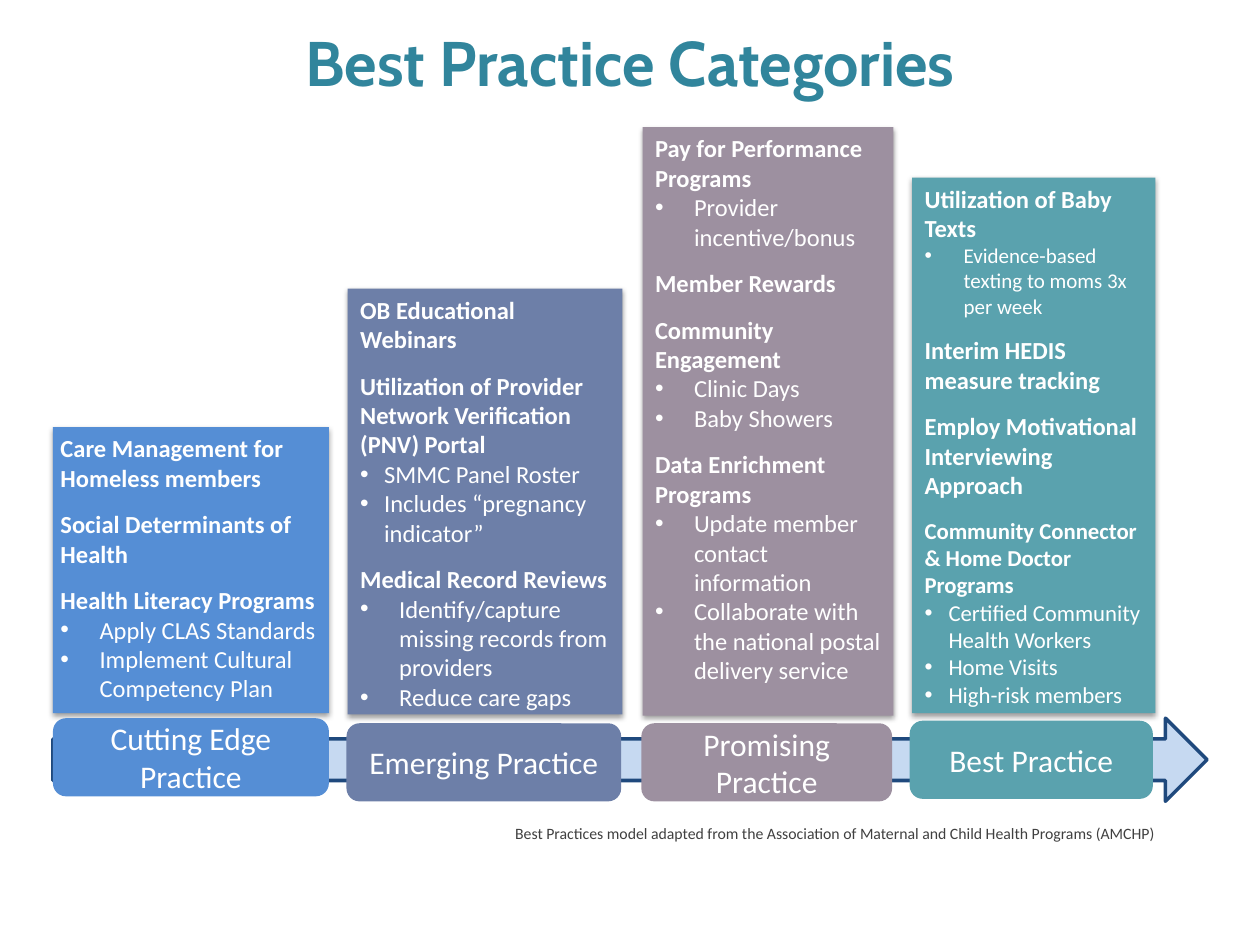
from dataclasses import dataclass

from lxml import etree
from pptx import Presentation
from pptx.dml.color import RGBColor
from pptx.enum.shapes import MSO_SHAPE
from pptx.enum.text import MSO_ANCHOR, PP_ALIGN
from pptx.oxml.ns import qn
from pptx.util import Inches, Pt

RECTANGLE = MSO_SHAPE.RECTANGLE
ROUNDED = MSO_SHAPE.ROUNDED_RECTANGLE
ARROW = MSO_SHAPE.RIGHT_ARROW
CENTER, LEFT = PP_ALIGN.CENTER, PP_ALIGN.LEFT
MIDDLE, TOP = MSO_ANCHOR.MIDDLE, MSO_ANCHOR.TOP

COLORS = {
    "title": "31859C", "white": "FFFFFF", "note": "404040",
    "arrow": "C6D9F1", "arrow_line": "1F497D", "shadow": "000000",
    "cutting_edge": "558ED5", "emerging": "6D7FA8",
    "promising": "9D90A0", "best": "5AA2AE",
}
WIDE, NARROW = 0.31, 0.19  # hanging indents of bullets, in inches
TOPIC_GAP = 9.75
LABEL_HEIGHT = 0.62


@dataclass
class Topic:
    heading: str
    bullets: tuple = ()
    indent: float = WIDE
    size: int = 14
    bullet_size: int = 14


@dataclass
class Category:
    name: str
    color: str
    bar: tuple
    label_left: float
    label_top: float
    topics: list
    side_insets: tuple = (0.1, 0.1)


CATEGORIES = [
    Category("Cutting Edge Practice", "cutting_edge", (0.42, 3.39, 2.19, 2.27), 0.42, 5.7, [
        Topic("Care Management for Homeless members"),
        Topic("Social Determinants of Health"),
        Topic("Health Literacy Programs",
              ("Apply CLAS Standards", "Implement Cultural Competency Plan")),
    ], side_insets=(0.06, 0)),
    Category("Emerging Practice", "emerging", (2.76, 2.29, 2.18, 3.38), 2.75, 5.74, [
        Topic("OB Educational Webinars"),
        Topic("Utilization of Provider Network Verification (PNV) Portal",
              ("SMMC Panel Roster", "Includes “pregnancy indicator”"), NARROW),
        Topic("Medical Record Reviews",
              ("Identify/capture missing records from providers", "Reduce care gaps")),
    ]),
    Category("Promising Practice", "promising", (5.1, 1.01, 1.99, 4.67), 5.09, 5.74, [
        Topic("Pay for Performance Programs", ("Provider incentive/bonus",)),
        Topic("Member Rewards"),
        Topic("Community Engagement", ("Clinic Days", "Baby Showers")),
        Topic("Data Enrichment Programs",
              ("Update member contact information",
               "Collaborate with the national postal delivery service")),
    ]),
    Category("Best Practice", "best", (7.24, 1.41, 1.93, 4.25), 7.22, 5.72, [
        Topic("Utilization of Baby Texts",
              ("Evidence-based texting to moms 3x per week",), bullet_size=12),
        Topic("Interim HEDIS measure tracking"),
        Topic("Employ Motivational Interviewing Approach"),
        Topic("Community Connector & Home Doctor Programs",
              ("Certified Community Health Workers", "Home Visits", "High-risk members"),
              NARROW, 13, 13),
    ]),
]


def rgb(name):
    return RGBColor.from_string(COLORS[name])


def add_run(paragraph, text, size, color, bold=False, font="Calibri"):
    run = paragraph.add_run()
    run.text = text
    run.font.name, run.font.size, run.font.bold = font, Pt(size), bold
    run.font.color.rgb = rgb(color)


def add_block(slide, kind, box, color):
    shape = slide.shapes.add_shape(kind, *map(Inches, box))
    shape.fill.solid()
    shape.fill.fore_color.rgb = rgb(color)
    shape.line.fill.background()
    shape.shadow.inherit = False
    return shape


def add_drop_shadow(shape):
    effects = shape._element.spPr.find(qn("a:effectLst"))
    shadow = etree.SubElement(effects, qn("a:outerShdw"), blurRad=str(Pt(3.1)),
                              dist=str(Pt(1.6)), dir="5400000", rotWithShape="0")
    color = etree.SubElement(shadow, qn("a:srgbClr"), val=COLORS["shadow"])
    etree.SubElement(color, qn("a:alpha"), val="38000")


def set_bullet(paragraph, indent):
    properties = paragraph._p.get_or_add_pPr()
    properties.set("marL", str(Inches(indent)))
    properties.set("indent", str(-Inches(indent)))
    etree.SubElement(properties, qn("a:buFont"), typeface="Arial")
    etree.SubElement(properties, qn("a:buChar"), char="•")


def add_topics(frame, topics):
    for number, topic in enumerate(topics):
        heading = frame.add_paragraph() if number else frame.paragraphs[0]
        heading.alignment = LEFT
        if number:
            heading.space_before = Pt(TOPIC_GAP)
        add_run(heading, topic.heading, topic.size, "white", bold=True)
        for text in topic.bullets:
            paragraph = frame.add_paragraph()
            paragraph.alignment = LEFT
            set_bullet(paragraph, topic.indent)
            add_run(paragraph, text, topic.bullet_size, "white")


def add_category(slide, category):
    """Place a bar of topics and the name label below it."""
    bar = add_block(slide, RECTANGLE, category.bar, category.color)
    add_drop_shadow(bar)
    frame = bar.text_frame
    frame.word_wrap = True
    frame.vertical_anchor = TOP
    frame.margin_left, frame.margin_right = map(Inches, category.side_insets)
    add_topics(frame, category.topics)

    label_box = (category.label_left, category.label_top, category.bar[2], LABEL_HEIGHT)
    label = add_block(slide, ROUNDED, label_box, category.color)
    label.text_frame.word_wrap = True
    label.text_frame.vertical_anchor = MIDDLE
    paragraph = label.text_frame.paragraphs[0]
    paragraph.alignment = CENTER
    add_run(paragraph, category.name, 18, "white")


def add_arrow(slide, box):
    arrow = add_block(slide, ARROW, box, "arrow")
    arrow.line.color.rgb = rgb("arrow_line")
    arrow.line.width = Pt(2)


def add_text(slide, box, text, size, color, alignment=LEFT, anchor=TOP, **style):
    frame = slide.shapes.add_textbox(*map(Inches, box)).text_frame
    frame.word_wrap = True
    frame.vertical_anchor = anchor
    paragraph = frame.paragraphs[0]
    paragraph.alignment = alignment
    add_run(paragraph, text, size, color, **style)


def main():
    presentation = Presentation()
    presentation.slide_width, presentation.slide_height = Inches(10), Inches(7.5)
    slide = presentation.slides.add_slide(presentation.slide_layouts[6])
    add_arrow(slide, (0.42, 5.7, 9.16, 0.66))
    add_text(slide, (0.69, 0.07, 8.62, 0.83), "Best Practice Categories", 36, "title",
             CENTER, MIDDLE, bold=True, font="Cabin")
    for category in CATEGORIES:
        add_category(slide, category)
    add_text(slide, (3.99, 6.49, 5.33, 0.25),
             "Best Practices model adapted from the Association of Maternal "
             "and Child Health Programs (AMCHP)", 9, "note")
    presentation.save("out.pptx")


if __name__ == "__main__":
    main()
